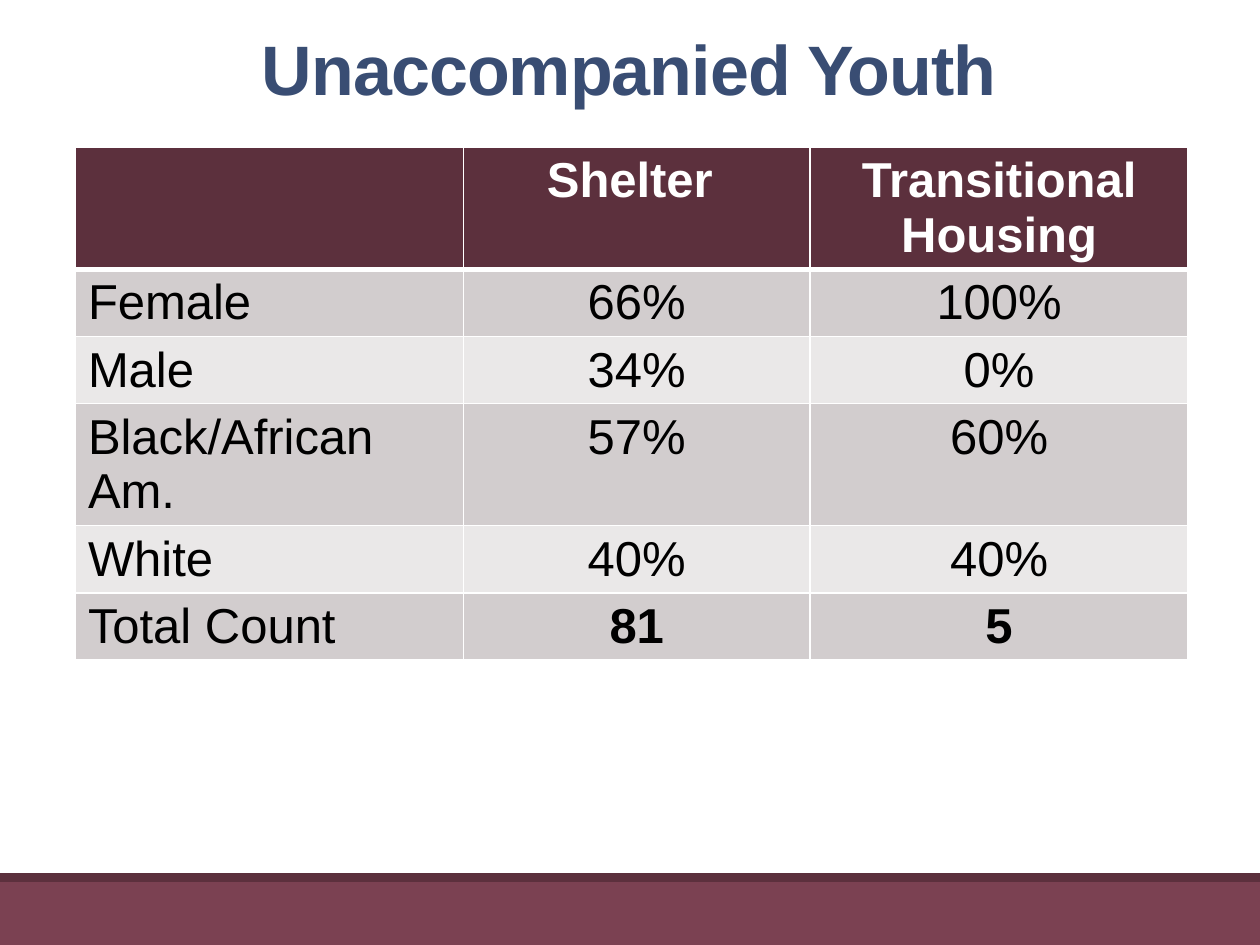
"""Build the Unaccompanied Youth slide with its table and footer bands."""
from dataclasses import dataclass
from typing import NamedTuple

from lxml import etree
from pptx import Presentation
from pptx.dml.color import RGBColor
from pptx.enum.shapes import MSO_SHAPE
from pptx.enum.text import MSO_ANCHOR, MSO_AUTO_SIZE, PP_ALIGN
from pptx.oxml.ns import qn
from pptx.util import Cm, Pt

RECTANGLE = MSO_SHAPE.RECTANGLE
BOTTOM = MSO_ANCHOR.BOTTOM
NO_AUTOFIT = MSO_AUTO_SIZE.NONE
LEFT, CENTER = PP_ALIGN.LEFT, PP_ALIGN.CENTER


@dataclass(frozen=True)
class Theme:
    font: str = "Arial"
    title_size: float = 40
    table_size: float = 28
    title: str = "394D73"
    plum: str = "7B4152"
    dark_plum: str = "5C303D"
    white: str = "FFFFFF"
    black: str = "000000"
    bands: tuple[str, str] = ("D2CDCE", "EAE8E8")


class Band(NamedTuple):
    top: float
    height: float
    color: str


class Row(NamedTuple):
    texts: tuple[str, str, str]
    bold_values: bool = False


THEME = Theme()
SLIDE_WIDTH, SLIDE_HEIGHT = 25.4, 19.05
FOOTER = (Band(17.78, 1.27, THEME.plum), Band(17.6, 0.18, THEME.dark_plum))
COLUMN_WIDTHS = (7.82, 6.99, 7.62)
HEADER_HEIGHT, ROW_HEIGHT = 1.96, 1.02
ROWS = (
    Row(("", "Shelter ", "Transitional Housing"), True),
    Row(("Female", "66%", "100%")),
    Row(("Male", "34%", "0%")),
    Row(("Black/African Am.", "57%", "60%")),
    Row(("White", "40%", "40%")),
    Row(("Total Count", "81", "5"), True),
)


def style_font(para, size: float, color: str, bold: bool) -> None:
    """Set the typeface, size, colour and weight of a paragraph."""
    font = para.font
    font.name, font.size, font.bold = THEME.font, Pt(size), bold
    font.color.rgb = RGBColor.from_string(color)


def add_band(page, band: Band) -> None:
    """Draw one full-width footer band."""
    shape = page.shapes.add_shape(
        RECTANGLE, 0, Cm(band.top), Cm(SLIDE_WIDTH), Cm(band.height))
    shape.shadow.inherit = False
    shape.fill.solid()
    shape.fill.fore_color.rgb = RGBColor.from_string(band.color)
    shape.line.fill.background()


def set_title(page, text: str) -> None:
    """Place and format the title placeholder."""
    box = page.shapes.title
    box.left, box.top, box.width, box.height = Cm(1.27), Cm(-1.7), Cm(22.68), Cm(4.04)
    frame = box.text_frame
    frame.text = text
    frame.word_wrap = True
    frame.auto_size = NO_AUTOFIT
    frame.vertical_anchor = BOTTOM
    para = frame.paragraphs[0]
    para.alignment = CENTER
    para.line_spacing = 0.85
    style_font(para, THEME.title_size, THEME.title, True)
    para._p.get_or_add_pPr().set("marL", str(Cm(0.15)))
    para.runs[0]._r.get_or_add_rPr().set("spc", "-50")


def set_borders(cell, bottom: float) -> None:
    """Give a cell thin white borders and a bottom border of its own width."""
    properties = cell._tc.get_or_add_tcPr()
    for side, width in (("L", 1), ("R", 1), ("T", 1), ("B", bottom)):
        line = etree.SubElement(properties, qn(f"a:ln{side}"), w=str(Pt(width)))
        fill = etree.SubElement(line, qn("a:solidFill"))
        etree.SubElement(fill, qn("a:srgbClr"), val=THEME.white)


def fill_cell(cell, text: str, row: int, column: int, bold_values: bool) -> None:
    """Write and format one table cell."""
    header = row == 0
    set_borders(cell, 3 if header else 1)
    cell.fill.solid()
    color = THEME.dark_plum if header else THEME.bands[(row - 1) % 2]
    cell.fill.fore_color.rgb = RGBColor.from_string(color)
    cell.text = text
    para = cell.text_frame.paragraphs[0]
    para.alignment = CENTER if column else LEFT
    style_font(para, THEME.table_size, THEME.white if header else THEME.black,
               bold_values and column > 0)


def add_youth_table(page) -> None:
    """Add the table of shelter and transitional housing shares."""
    height = HEADER_HEIGHT + ROW_HEIGHT * (len(ROWS) - 1)
    table = page.shapes.add_table(
        len(ROWS), len(COLUMN_WIDTHS), Cm(1.52), Cm(2.97),
        Cm(sum(COLUMN_WIDTHS)), Cm(height)).table
    for column, width in zip(table.columns, COLUMN_WIDTHS):
        column.width = Cm(width)
    for row_index, row in enumerate(ROWS):
        table.rows[row_index].height = Cm(ROW_HEIGHT if row_index else HEADER_HEIGHT)
        for column_index, text in enumerate(row.texts):
            fill_cell(table.cell(row_index, column_index), text,
                      row_index, column_index, row.bold_values)


def main() -> None:
    """Build and save the deck."""
    deck = Presentation()
    deck.slide_width, deck.slide_height = Cm(SLIDE_WIDTH), Cm(SLIDE_HEIGHT)
    page = deck.slides.add_slide(deck.slide_layouts[5])
    for band in FOOTER:
        add_band(page, band)
    set_title(page, "Unaccompanied Youth")
    add_youth_table(page)
    deck.save("out.pptx")


if __name__ == "__main__":
    main()
